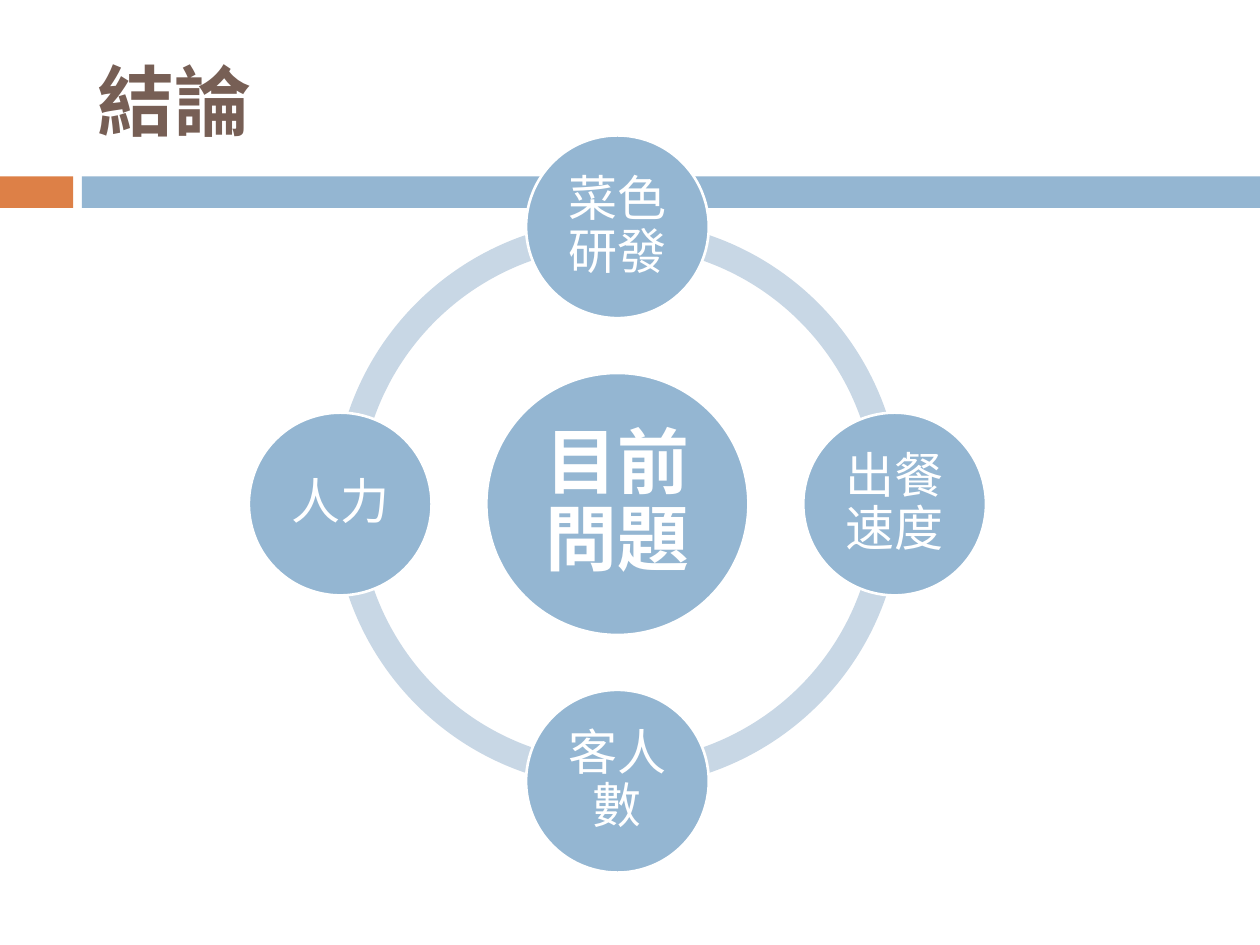
"""Build the conclusion slide: four issues around a central problem."""
from math import cos, radians, sin

from pptx import Presentation
from pptx.dml.color import RGBColor
from pptx.enum.shapes import MSO_SHAPE as SHAPE
from pptx.enum.text import MSO_ANCHOR as ANCHOR, PP_ALIGN as ALIGN
from pptx.util import Inches, Pt

TITLE = "結論"
CENTRE = "目前問題"
ISSUES = ["出餐速度", "客人數", "人力", "菜色研發"]

FONT = "Cabin"
BLUE, PALE, ORANGE, BROWN, WHITE = "94B6D2", "C8D7E5", "DD8047", "775F55", "FFFFFF"
W, H = 10, 7.5
CX, CY, ORBIT = 4.9, 4, 2.2
RING_SIZE, HUB_SIZE, ISSUE_SIZE = 4.51, 2.08, 1.45
BAR_TOP, BAR_HEIGHT, BAR_SPLIT, BAR_GAP = 1.4, 0.25, 0.58, 0.07
QUARTER = 54


def rgb(value):
    return RGBColor.from_string(value)


def style_font(p, size, color, bold=False):
    p.font.name, p.font.size, p.font.bold = FONT, Pt(size), bold
    p.font.color.rgb = rgb(color)


def add_shape(s, kind, left, top, width, height, fill):
    sp = s.shapes.add_shape(kind, *map(Inches, (left, top, width, height)))
    sp.shadow.inherit = False
    sp.fill.solid()
    sp.fill.fore_color.rgb = rgb(fill)
    sp.line.fill.background()
    return sp


def add_centred(s, kind, x, y, size, fill):
    return add_shape(s, kind, x - size / 2, y - size / 2, size, size, fill)


def add_circle(s, text, x, y, size, font_size, bold=False):
    sp = add_centred(s, SHAPE.OVAL, x, y, size, BLUE)
    sp.line.color.rgb = rgb(WHITE)
    sp.line.width = Pt(1.5)
    tf = sp.text_frame
    tf.word_wrap = True
    tf.vertical_anchor = ANCHOR.MIDDLE
    tf.margin_left = tf.margin_right = tf.margin_top = tf.margin_bottom = Inches(0.04)
    p = tf.paragraphs[0]
    p.text, p.alignment, p.line_spacing = text, ALIGN.CENTER, 0.9
    style_font(p, font_size, WHITE, bold)


def add_title(s):
    title = s.shapes.title
    title.left, title.top, title.width, title.height = map(Inches, (0.67, 0.25, 8.92, 1.08))
    tf = title.text_frame
    tf.vertical_anchor = ANCHOR.MIDDLE
    p = tf.paragraphs[0]
    p.text, p.alignment = TITLE, ALIGN.LEFT
    style_font(p, 44, BROWN, True)


def main():
    prs = Presentation()
    prs.slide_width, prs.slide_height = Inches(W), Inches(H)
    s = prs.slides.add_slide(prs.slide_layouts[5])
    add_title(s)

    bar_left = BAR_SPLIT + BAR_GAP
    add_shape(s, SHAPE.RECTANGLE, 0, BAR_TOP, BAR_SPLIT, BAR_HEIGHT, ORANGE)
    add_shape(s, SHAPE.RECTANGLE, bar_left, BAR_TOP, W - bar_left, BAR_HEIGHT, BLUE)

    count = len(ISSUES)
    for i in range(count):
        arc = add_centred(s, SHAPE.BLOCK_ARC, CX, CY, RING_SIZE, PALE)
        arc.adjustments[0] = i * QUARTER
        arc.adjustments[1] = (i + 1) % count * QUARTER
        arc.adjustments[2] = 0.046

    add_circle(s, CENTRE, CX, CY, HUB_SIZE, 41, True)
    for i, issue in enumerate(ISSUES):
        angle = radians(360 / count * i)
        add_circle(s, issue, CX + ORBIT * cos(angle), CY + ORBIT * sin(angle), ISSUE_SIZE, 28)

    prs.save("out.pptx")


if __name__ == "__main__":
    main()
